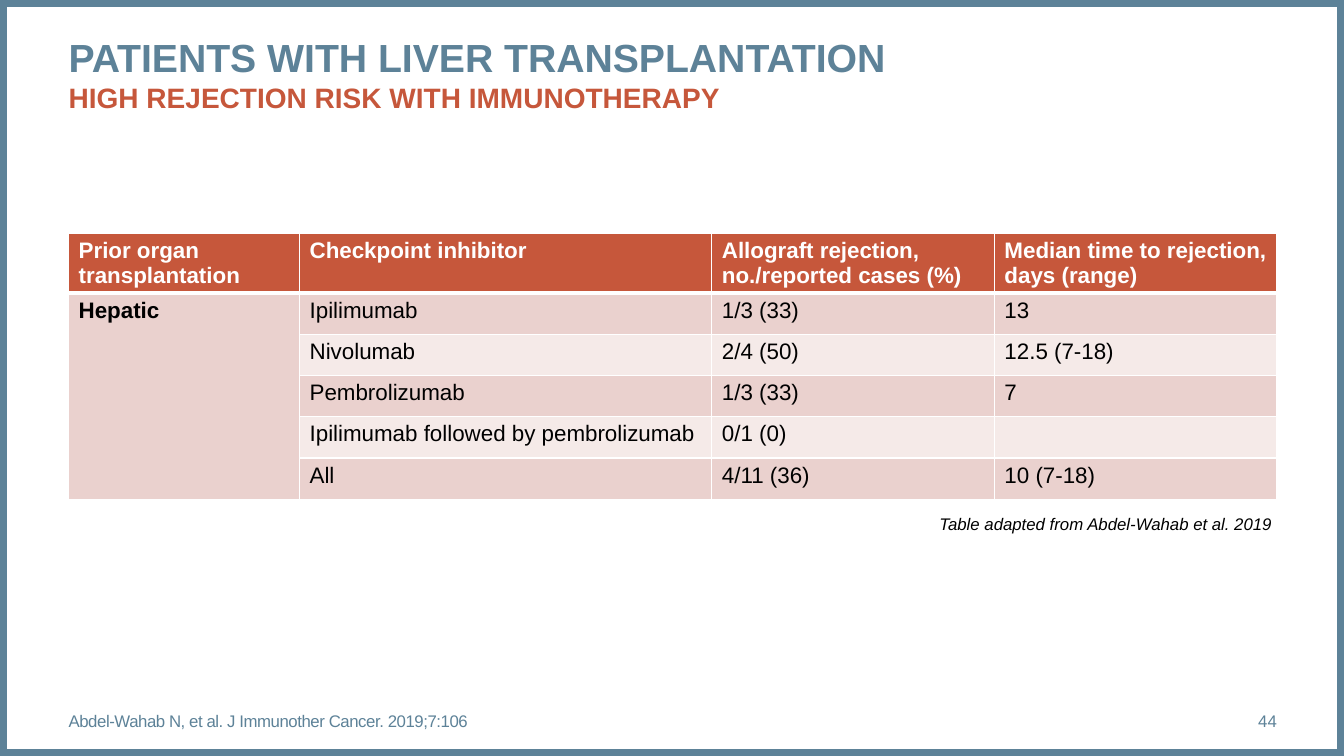
from lxml import etree
from pptx import Presentation
from pptx import util as u
from pptx.dml.color import RGBColor
from pptx.enum import shapes, text
from pptx.oxml import ns

SLATE = RGBColor(0x5D, 0x82, 0x98)
RUST = RGBColor(0xC6, 0x57, 0x3B)
ROSE = RGBColor(0xEA, 0xD1, 0xCE)
BLUSH = RGBColor(0xF5, 0xEA, 0xE8)
WHITE = RGBColor(0xFF, 0xFF, 0xFF)
BLACK = RGBColor(0, 0, 0)

FONT = "Arial"
SLIDE_WIDTH, SLIDE_HEIGHT = u.Cm(33.87), u.Cm(19.05)
MARGIN = u.Cm(1.73)
CONTENT_WIDTH = u.Cm(30.45)

HEADINGS = [
    "Prior organ transplantation",
    "Checkpoint inhibitor",
    "Allograft rejection, no./reported cases (%)",
    "Median time to rejection, days (range)",
]
REJECTIONS = [
    ["Hepatic", "Ipilimumab", "1/3 (33)", "13"],
    ["", "Nivolumab", "2/4 (50)", "12.5 (7-18)"],
    ["", "Pembrolizumab", "1/3 (33)", "7"],
    ["", "Ipilimumab followed by pembrolizumab", "0/1 (0)", ""],
    ["", "All", "4/11 (36)", "10 (7-18)"],
]
COLUMN_WIDTHS = [5.82, 10.39, 7.12, 7.12]
HEADING_HEIGHT, ROW_HEIGHT = 1.5, 1.04


def add_run(paragraph, words, size, color, bold=False, italic=False):
    run = paragraph.add_run()
    run.text = words
    run.font.name = FONT
    run.font.size = u.Pt(size)
    run.font.color.rgb = color
    run.font.bold = bold
    run.font.italic = italic
    return run


def set_insets(frame, top=0):
    frame.margin_left = frame.margin_right = frame.margin_bottom = 0
    frame.margin_top = top


def add_frame(slide, left, top, width, height):
    border = slide.shapes.add_shape(
        shapes.MSO_SHAPE.RECTANGLE, left, top, width, height)
    border.shadow.inherit = False
    border.fill.background()
    border.line.color.rgb = SLATE
    border.line.width = u.Pt(10)


def add_heading(slide, left, top, width, height):
    title = slide.shapes.title
    title.left, title.top, title.width, title.height = left, top, width, height
    frame = title.text_frame
    frame.auto_size = text.MSO_AUTO_SIZE.NONE
    frame.vertical_anchor = text.MSO_ANCHOR.TOP
    set_insets(frame, u.Cm(0.12))
    paragraph = frame.paragraphs[0]
    paragraph.alignment = text.PP_ALIGN.LEFT
    add_run(paragraph, "PATIENTS WITH LIVER TRANSPLANTATION", 28, SLATE, bold=True)
    paragraph.add_line_break()
    add_run(paragraph, "HIGH REJECTION RISK WITH IMMUNOTHERAPY", 20, RUST, bold=True)


def set_borders(cell, bottom_width):
    properties = cell._tc.get_or_add_tcPr()
    widths = {"a:lnL": 1, "a:lnR": 1, "a:lnT": 1, "a:lnB": bottom_width}
    for position, (side, width) in enumerate(widths.items()):
        line = etree.Element(ns.qn(side), w=str(u.Pt(width)))
        fill = etree.SubElement(line, ns.qn("a:solidFill"))
        etree.SubElement(fill, ns.qn("a:srgbClr"), val=str(WHITE))
        properties.insert(position, line)


def add_rejection_table(slide, left, top, width, height):
    rows = [HEADINGS] + REJECTIONS
    table = slide.shapes.add_table(
        len(rows), len(HEADINGS), left, top, width, height).table
    for column, column_width in zip(table.columns, COLUMN_WIDTHS):
        column.width = u.Cm(column_width)
    for row_index, values in enumerate(rows):
        is_heading = row_index == 0
        table.rows[row_index].height = u.Cm(HEADING_HEIGHT if is_heading else ROW_HEIGHT)
        band = RUST if is_heading else ROSE if row_index % 2 else BLUSH
        for column_index, value in enumerate(values):
            cell = table.cell(row_index, column_index)
            cell.fill.solid()
            cell.fill.fore_color.rgb = ROSE if column_index == 0 and not is_heading else band
            set_borders(cell, 3 if is_heading else 1)
            if value:
                add_run(cell.text_frame.paragraphs[0], value, 16,
                        WHITE if is_heading else BLACK,
                        bold=is_heading or column_index == 0)
    table.cell(1, 0).merge(table.cell(len(REJECTIONS), 0))


def add_text_box(slide, left, top, width, height, alignment):
    frame = slide.shapes.add_textbox(left, top, width, height).text_frame
    frame.word_wrap = True
    frame.paragraphs[0].alignment = alignment
    return frame


def add_table_credit(slide, left, top, width, height):
    credit = add_text_box(slide, left, top, width, height, text.PP_ALIGN.RIGHT)
    add_run(credit.paragraphs[0], "Table adapted from Abdel-Wahab et al. 2019",
            12, BLACK, italic=True)


def add_footer(slide, left, top, width, height):
    number_width = u.Cm(2.18)
    citation = add_text_box(
        slide, left, top, width - number_width, height, text.PP_ALIGN.LEFT)
    number = add_text_box(
        slide, left + width - number_width, top, number_width, height,
        text.PP_ALIGN.RIGHT)
    for frame in (citation, number):
        frame.vertical_anchor = text.MSO_ANCHOR.MIDDLE
        set_insets(frame)
    reference = add_run(
        citation.paragraphs[0],
        "Abdel-Wahab N, et al. J Immunother Cancer. 2019;7:106", 12, SLATE)
    reference.font._element.set("spc", "-30")
    add_run(number.paragraphs[0], "44", 12, SLATE)


def main():
    deck = Presentation()
    deck.slide_width, deck.slide_height = SLIDE_WIDTH, SLIDE_HEIGHT
    slide = deck.slides.add_slide(deck.slide_layouts[5])
    add_frame(slide, 0, 0, SLIDE_WIDTH, SLIDE_HEIGHT)
    add_heading(slide, MARGIN, u.Cm(0.71), CONTENT_WIDTH, u.Cm(2.39))
    add_rejection_table(slide, MARGIN, u.Cm(5.87), CONTENT_WIDTH,
                        u.Cm(HEADING_HEIGHT + ROW_HEIGHT * len(REJECTIONS)))
    add_table_credit(slide, u.Cm(23.27), u.Cm(12.83), u.Cm(9.04), u.Cm(0.84))
    add_footer(slide, MARGIN, u.Cm(17.65), CONTENT_WIDTH, u.Cm(1.02))
    deck.save("out.pptx")


if __name__ == "__main__":
    main()
